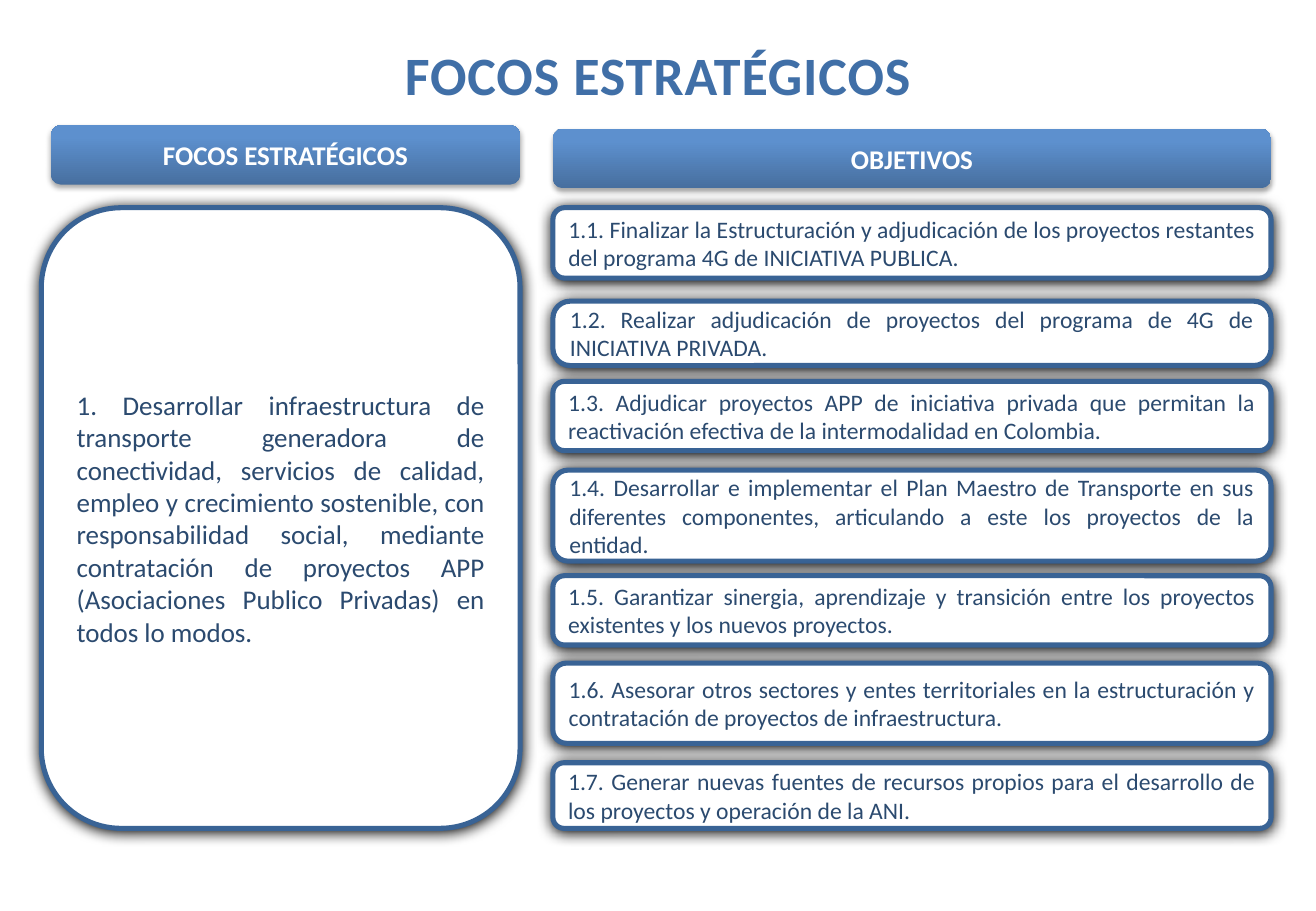
from dataclasses import dataclass
from typing import Any

from lxml.etree import SubElement
from pptx import Presentation
from pptx.dml.color import RGBColor
from pptx.enum.shapes import MSO_SHAPE as Shape
from pptx.enum.text import MSO_ANCHOR as Anchor, PP_ALIGN as Align
from pptx.oxml.ns import qn
from pptx.util import Inches, Pt

TITLE_BLUE = RGBColor(0x40, 0x6F, 0xA7)
TEXT_BLUE = RGBColor(0x2B, 0x4A, 0x6F)
BORDER_BLUE = RGBColor(0x39, 0x63, 0x95)
WHITE = RGBColor(0xFF, 0xFF, 0xFF)
BLACK = RGBColor(0, 0, 0)
HEADER_GRADIENT = (
    (0, RGBColor(0x47, 0x6F, 0x9F)),
    (80, RGBColor(0x5D, 0x90, 0xCE)),
    (100, RGBColor(0x5B, 0x91, 0xD1)),
)

FOCUS_LEFT, FOCUS_WIDTH = 0.34, 3.94
GOAL_LEFT, GOAL_WIDTH = 4.55, 5.91
HEADER_HEIGHT = 0.49
PANEL_TOP, PANEL_HEIGHT = 1.71, 5.11

TITLE_FONT = {"name": "Calibri", "size": Pt(32), "bold": True}
HEADER_FONT = {"name": "Calibri", "size": Pt(16), "bold": True}
FOCUS_FONT = {"name": "Calibri", "size": Pt(16), "bold": False}
GOAL_FONT = {"name": "Calibri", "size": Pt(14), "bold": False}


@dataclass(frozen=True)
class Shadow:
    opacity: int
    blur: float
    distance: float


HEADER_SHADOW = Shadow(35, 3.1, 1.8)
PANEL_SHADOW = Shadow(100, 8.5, 1)


@dataclass(frozen=True)
class Box:
    text: str
    left: float
    top: float
    width: float
    height: float
    rounding: float = 0.167


@dataclass(frozen=True)
class Goal:
    text: str
    top: float
    height: float
    rounding: float = 0.167


HEADERS = (
    Box("FOCOS ESTRATÉGICOS", 0.42, 1.03, 3.86, HEADER_HEIGHT),
    Box("OBJETIVOS", GOAL_LEFT, 1.06, GOAL_WIDTH, HEADER_HEIGHT),
)
FOCUS = Box(
    "1. Desarrollar infraestructura de transporte generadora de conectividad, "
    "servicios de calidad, empleo y crecimiento sostenible, con responsabilidad "
    "social, mediante contratación de proyectos APP (Asociaciones Publico "
    "Privadas) en todos lo modos.",
    FOCUS_LEFT, PANEL_TOP, FOCUS_WIDTH, PANEL_HEIGHT,
)
GOALS = (
    Goal("1.1. Finalizar la Estructuración y adjudicación de los proyectos "
         "restantes del programa 4G de INICIATIVA PUBLICA.", PANEL_TOP, 0.58),
    Goal("1.2. Realizar adjudicación de proyectos del programa de 4G de "
         "INICIATIVA PRIVADA.", 2.48, 0.53, 0.267),
    Goal("1.3. Adjudicar proyectos APP de iniciativa privada que permitan la "
         "reactivación efectiva de la intermodalidad en Colombia.", 3.14, 0.57),
    Goal("1.4. Desarrollar e implementar el Plan Maestro de Transporte en sus "
         "diferentes componentes, articulando a este los proyectos de la entidad.",
         3.87, 0.75),
    Goal("1.5. Garantizar sinergia, aprendizaje y transición entre los proyectos "
         "existentes y los nuevos proyectos.", 4.74, 0.57),
    Goal("1.6. Asesorar otros sectores y entes territoriales en la estructuración "
         "y contratación de proyectos de infraestructura.", 5.46, 0.66),
    Goal("1.7. Generar nuevas fuentes de recursos propios para el desarrollo de "
         "los proyectos y operación de la ANI.", 6.28, 0.54),
)


def write_text(shape: Any, text: str, font: dict[str, Any], color: RGBColor,
               alignment: Align) -> Any:
    frame = shape.text_frame
    frame.word_wrap = True
    frame.vertical_anchor = Anchor.MIDDLE
    paragraph = frame.paragraphs[0]
    paragraph.alignment = alignment
    run = paragraph.add_run()
    run.text = text
    for attribute, value in font.items():
        setattr(run.font, attribute, value)
    run.font.color.rgb = color
    return run


def add_color(parent: Any, color: RGBColor) -> Any:
    return SubElement(parent, qn("a:srgbClr"), val=str(color))


def add_shadow(shape: Any, shadow: Shadow) -> None:
    shape.shadow.inherit = False
    effects = shape.element.spPr.find(qn("a:effectLst"))
    outer = SubElement(
        effects, qn("a:outerShdw"), blurRad=str(Pt(shadow.blur)),
        dist=str(Pt(shadow.distance)), dir="5400000", rotWithShape="0",
    )
    SubElement(add_color(outer, BLACK), qn("a:alpha"), val=str(shadow.opacity * 1000))


def add_box(slide: Any, box: Box, shadow: Shadow) -> Any:
    shape = slide.shapes.add_shape(
        Shape.ROUNDED_RECTANGLE, Inches(box.left), Inches(box.top),
        Inches(box.width), Inches(box.height),
    )
    shape.adjustments[0] = box.rounding
    add_shadow(shape, shadow)
    return shape


def add_header(slide: Any, box: Box) -> None:
    shape = add_box(slide, box, HEADER_SHADOW)
    shape.line.fill.background()
    shape.fill.gradient()
    shape.fill.gradient_angle = 90
    stops = shape.element.spPr.find(qn("a:gradFill")).find(qn("a:gsLst"))
    for stop in list(stops):
        stops.remove(stop)
    for position, color in HEADER_GRADIENT:
        add_color(SubElement(stops, qn("a:gs"), pos=str(position * 1000)), color)
    write_text(shape, box.text, HEADER_FONT, WHITE, Align.CENTER)


def add_panel(slide: Any, box: Box, font: dict[str, Any]) -> None:
    shape = add_box(slide, box, PANEL_SHADOW)
    shape.fill.solid()
    shape.fill.fore_color.rgb = WHITE
    shape.line.color.rgb = BORDER_BLUE
    shape.line.width = Pt(3)
    write_text(shape, box.text, font, TEXT_BLUE, Align.JUSTIFY)


def add_title(slide: Any, width: int) -> None:
    title = slide.shapes.title
    title.left, title.top = Inches(0), Inches(0.29)
    title.width, title.height = width, Inches(0.64)
    run = write_text(title, "FOCOS ESTRATÉGICOS", TITLE_FONT, TITLE_BLUE, Align.CENTER)
    run.font._element.set("spc", "50")


def main() -> None:
    presentation = Presentation()
    presentation.slide_width = Inches(10.83)
    presentation.slide_height = Inches(7.5)
    slide = presentation.slides.add_slide(presentation.slide_layouts[5])
    add_title(slide, presentation.slide_width)
    for header in HEADERS:
        add_header(slide, header)
    add_panel(slide, FOCUS, FOCUS_FONT)
    for goal in GOALS:
        box = Box(goal.text, GOAL_LEFT, goal.top, GOAL_WIDTH, goal.height, goal.rounding)
        add_panel(slide, box, GOAL_FONT)
    presentation.save("out.pptx")


if __name__ == "__main__":
    main()
